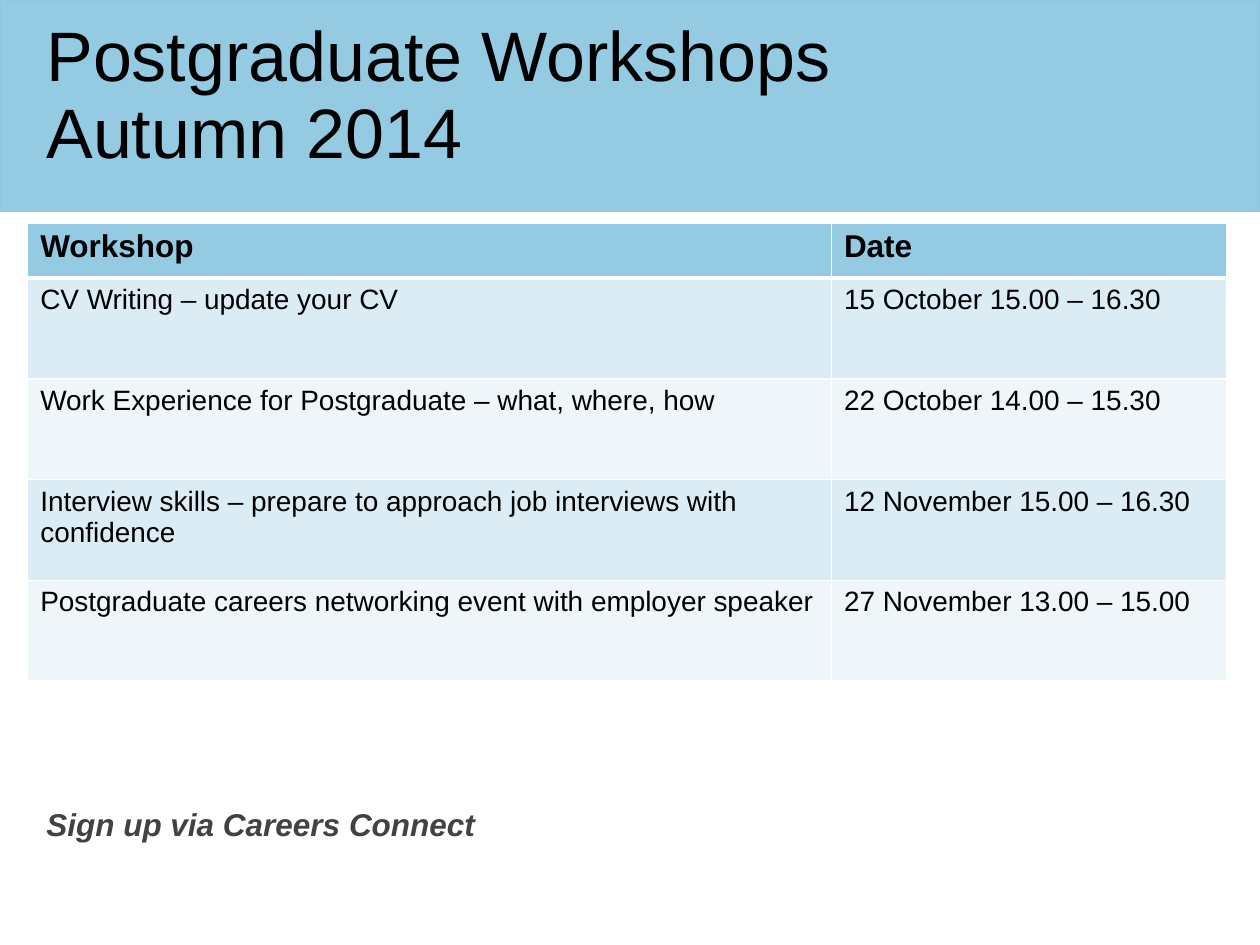
from dataclasses import dataclass

from lxml import etree
from pptx import Presentation
from pptx.dml.color import RGBColor
from pptx.enum.shapes import MSO_SHAPE
from pptx.enum.text import MSO_ANCHOR
from pptx.oxml.ns import qn
from pptx.util import Inches, Pt

RECT = MSO_SHAPE.RECTANGLE
BOTTOM = MSO_ANCHOR.BOTTOM
WIDE, HIGH = Inches(10), Inches(7.5)


@dataclass(frozen=True)
class Theme:
    font: str = "Arial"
    ink: str = "000000"
    soft: str = "424242"
    band: str = "94CBE3"
    edge: str = "8FC7E0"
    rule: str = "FFFFFF"
    rows: tuple = ("DCECF4", "EEF6FA")
    title: int = 40
    lead: int = 44
    head: int = 18
    body: int = 16
    foot: int = 18


THEME = Theme()

PLAN = [
    ("Workshop", "Date"),
    ("CV Writing – update your CV", "15 October 15.00 – 16.30"),
    ("Work Experience for Postgraduate – what, where, how", "22 October 14.00 – 15.30"),
    ("Interview skills – prepare to approach job interviews with confidence",
     "12 November 15.00 – 16.30"),
    ("Postgraduate careers networking event with employer speaker",
     "27 November 13.00 – 15.00"),
]


def share(left, top, width, height):
    return (int(WIDE * left), int(HIGH * top), int(WIDE * width), int(HIGH * height))


def style(frame, size, color, bold=False, slant=False):
    for para in frame.paragraphs:
        for run in para.runs:
            font = run.font
            font.name, font.size = THEME.font, Pt(size)
            font.bold, font.italic = bold, slant
            font.color.rgb = RGBColor.from_string(color)


def add_text(slide, box, text):
    frame = slide.shapes.add_textbox(*box).text_frame
    frame.word_wrap = True
    frame.vertical_anchor = BOTTOM
    frame.text = text
    return frame


def add_border(cell, side, width):
    line = etree.SubElement(cell._tc.get_or_add_tcPr(), qn(f"a:ln{side}"), w=str(Pt(width)))
    fill = etree.SubElement(line, qn("a:solidFill"))
    etree.SubElement(fill, qn("a:srgbClr"), val=THEME.rule)


def add_header(slide, box):
    left, top, width, height = box
    band = slide.shapes.add_shape(RECT, *box)
    band.shadow.inherit = False
    band.fill.solid()
    band.fill.fore_color.rgb = RGBColor.from_string(THEME.band)
    band.line.color.rgb = RGBColor.from_string(THEME.edge)
    band.line.width = Pt(0.75)
    inner = (left + int(width * 0.027), top, int(width * 0.918), int(height * 0.845))
    frame = add_text(slide, inner, "Postgraduate Workshops\vAutumn 2014")
    frame.paragraphs[0].line_spacing = Pt(THEME.lead)
    style(frame, THEME.title, THEME.ink)


def add_plan(slide, box):
    width, height = box[2:]
    table = slide.shapes.add_table(len(PLAN), 2, *box).table
    for col, part in zip(table.columns, (0.67, 0.33)):
        col.width = int(width * part)
    first = int(height * 0.12)
    for row in table.rows:
        row.height = (height - first) // (len(PLAN) - 1)
    table.rows[0].height = first
    for r, texts in enumerate(PLAN):
        head = r == 0
        tint = THEME.band if head else THEME.rows[(r - 1) % 2]
        for c, text in enumerate(texts):
            cell = table.cell(r, c)
            for side in "LRTB":
                thick = (head and side == "B") or (r == 1 and side == "T")
                add_border(cell, side, 3 if thick else 1)
            cell.fill.solid()
            cell.fill.fore_color.rgb = RGBColor.from_string(tint)
            cell.text_frame.text = text
            style(cell.text_frame, THEME.head if head else THEME.body, THEME.ink, head)


def add_footer(slide, box):
    frame = add_text(slide, box, "Sign up via Careers Connect")
    style(frame, THEME.foot, THEME.soft, True, True)


def main():
    deck = Presentation()
    deck.slide_width, deck.slide_height = WIDE, HIGH
    slide = deck.slides.add_slide(deck.slide_layouts[6])
    add_header(slide, share(0, 0, 1, 0.224))
    add_plan(slide, share(0.022, 0.236, 0.952, 0.485))
    add_footer(slide, share(0.027, 0.803, 0.952, 0.095))
    deck.save("out.pptx")


if __name__ == "__main__":
    main()
